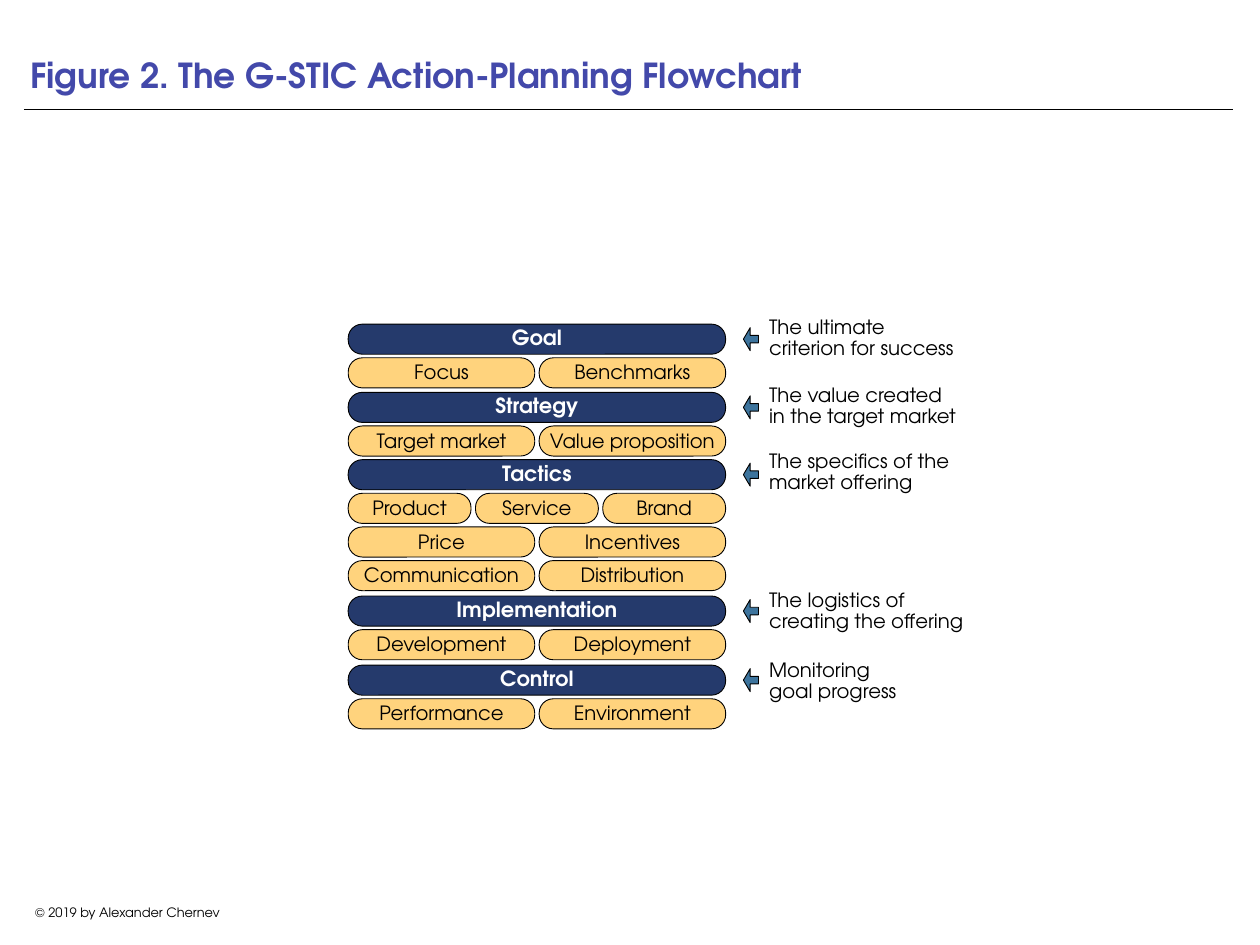
from collections import namedtuple
from dataclasses import dataclass

from pptx import Presentation
from pptx.dml.color import RGBColor
from pptx.enum import shapes, text
from pptx.oxml import xmlchemy as xml
from pptx.util import Inches, Pt

Box = namedtuple("Box", "left top width height")
Section = namedtuple("Section", "name top note note_top rows")


@dataclass(frozen=True)
class Theme:
    font: str = "TeX Gyre Adventor"
    title: str = "4349AA"
    ink: str = "000000"
    light: str = "FFFFFF"
    header: str = "253A6C"
    item: str = "FFD37D"
    arrow: str = "3D749D"
    title_size: float = 28
    header_size: float = 17
    body_size: float = 16
    footer_size: float = 10.5
    outline: float = 0.75
    rule: float = 0.5


THEME = Theme()
BAR_HEIGHT, ROW_PITCH, GAP = 0.34, 0.38, 0.05

SECTIONS = [
    Section("Goal", 3.66, "The ultimate criterion for success", 3.51,
            [["Focus", "Benchmarks"]]),
    Section("Strategy", 4.43, "The value created\vin the target market", 4.28,
            [["Target market", "Value proposition"]]),
    Section("Tactics", 5.19, "The specifics of the market offering", 5.02,
            [["Product", "Service", "Brand"],
             ["Price", "Incentives"],
             ["Communication", "Distribution"]]),
    Section("Implementation", 6.73, "The logistics of creating the offering", 6.59,
            [["Development", "Deployment"]]),
    Section("Control", 7.51, "Monitoring\vgoal progress", 7.38,
            [["Performance", "Environment"]]),
]


def apply(target, values):
    """Set each named attribute of the target."""
    for name, value in values.items():
        setattr(target, name, value)


def inches(box):
    return [Inches(length) for length in box]


def write(shape, words, size, color, bold=False, anchor=text.MSO_ANCHOR.MIDDLE,
          align=text.PP_ALIGN.LEFT, spacing=1.0, inset=0, wrap=True):
    """Fill a shape's text frame with one formatted paragraph."""
    frame = shape.text_frame
    margins = {f"margin_{side}": Inches(inset)
               for side in ("left", "right", "top", "bottom")}
    apply(frame, {"text": words, "word_wrap": wrap, "vertical_anchor": anchor,
                  "auto_size": text.MSO_AUTO_SIZE.NONE, **margins})
    para = frame.paragraphs[0]
    apply(para, {"alignment": align, "line_spacing": spacing})
    for span in para.runs:
        apply(span.font, {"name": THEME.font, "size": Pt(size), "bold": bold})
        span.font.color.rgb = RGBColor.from_string(color)


def draw_shape(page, kind, box, fill, adjustments):
    shape = page.shapes.add_shape(kind, *inches(box))
    shape.shadow.inherit = False
    shape.fill.solid()
    shape.fill.fore_color.rgb = RGBColor.from_string(fill)
    shape.line.color.rgb = RGBColor.from_string(THEME.ink)
    shape.line.width = Pt(THEME.outline)
    for index, value in enumerate(adjustments):
        shape.adjustments[index] = value
    return shape


def draw_heading(page, box):
    """Place the title and the rule below it."""
    title = page.shapes.title
    apply(title, dict(zip(Box._fields, inches(box))))
    write(title, "Figure 2. The G-STIC Action-Planning Flowchart", THEME.title_size,
          THEME.title, bold=True, anchor=text.MSO_ANCHOR.BOTTOM, inset=0.07)
    rule_top = Inches(box.top + box.height + 0.09)
    rule = page.shapes.add_connector(
        shapes.MSO_CONNECTOR.STRAIGHT, Inches(box.left), rule_top,
        Inches(box.left + box.width), rule_top)
    rule.line.color.rgb = RGBColor.from_string(THEME.ink)
    rule.line.width = Pt(THEME.rule)
    properties = rule._element.spPr
    properties.append(xml.OxmlElement("a:effectLst"))


def draw_bar(page, box, words, is_header):
    bar = draw_shape(page, shapes.MSO_SHAPE.ROUNDED_RECTANGLE, box,
                     THEME.header if is_header else THEME.item, [0.47])
    write(bar, words,
          THEME.header_size if is_header else THEME.body_size,
          THEME.light if is_header else THEME.ink,
          bold=is_header, anchor=text.MSO_ANCHOR.BOTTOM,
          align=text.PP_ALIGN.CENTER, spacing=0.9 if is_header else 0.8)


def draw_section(page, box, section):
    """Stack a header bar and its rows of items, each row split evenly."""
    draw_bar(page, box, section.name, True)
    for number, items in enumerate(section.rows, start=1):
        width = (box.width - GAP * (len(items) - 1)) / len(items)
        for column, item in enumerate(items):
            cell = Box(box.left + column * (width + GAP),
                       box.top + number * ROW_PITCH, width, box.height)
            draw_bar(page, cell, item, False)


def draw_note(page, box, section):
    """Place an arrow level with the header bar and the note beside it."""
    draw_shape(page, shapes.MSO_SHAPE.LEFT_ARROW,
               Box(box.left, box.top + 0.04, 0.17, 0.26), THEME.arrow, [0.33, 0.45])
    note_box = Box(box.left + 0.29, section.note_top, box.width - 0.29, 0.63)
    note = page.shapes.add_textbox(*inches(note_box))
    write(note, section.note, THEME.body_size, THEME.ink, spacing=0.9)


def draw_footer(page, box):
    footer = page.shapes.add_textbox(*inches(box))
    write(footer, "© 2019 by Alexander Chernev", THEME.footer_size, THEME.ink,
          align=text.PP_ALIGN.CENTER, wrap=False)


def main():
    deck = Presentation()
    apply(deck, {"slide_width": Inches(14.22), "slide_height": Inches(10.67)})
    page = deck.slides.add_slide(deck.slide_layouts.get_by_name("Title Only"))
    draw_heading(page, Box(0.27, 0, 13.65, 1.15))
    for section in SECTIONS:
        draw_section(page, Box(3.93, section.top, 4.26, BAR_HEIGHT), section)
        draw_note(page, Box(8.39, section.top, 2.5, BAR_HEIGHT), section)
    draw_footer(page, Box(0.27, 10.16, 2.34, 0.28))
    deck.save("out.pptx")


if __name__ == "__main__":
    main()
